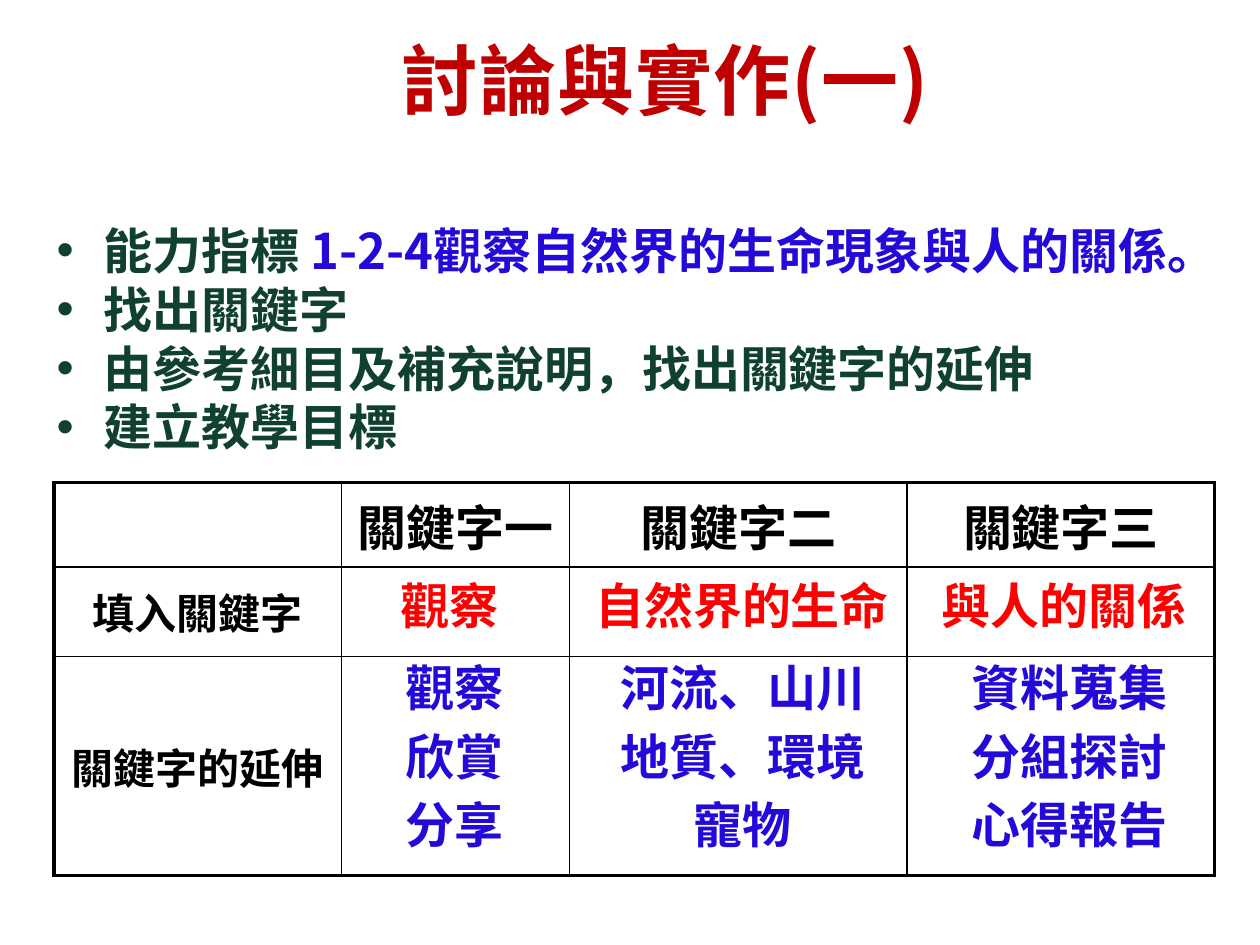
from dataclasses import dataclass

from lxml.etree import SubElement
from pptx import Presentation
from pptx.dml.color import RGBColor
from pptx.enum.text import MSO_ANCHOR, MSO_AUTO_SIZE, PP_ALIGN
from pptx.oxml.ns import qn
from pptx.util import Inches, Pt

COLORS = {
    "title": "C00000",
    "body": "104031",
    "detail": "230AD8",
    "keyword": "FF0000",
    "table": "000000",
}
SANS = "Noto Sans CJK SC"
SERIF = "Times New Roman"
COLUMNS = [2.28, 1.81, 2.68, 2.44]
ROWS = [0.67, 0.71, 1.74]
THIN, THICK = 1, 2.25


@dataclass
class Style:
    color: str
    size: float = 28
    font: str = SANS


@dataclass
class Answer:
    left: float
    top: float
    width: float
    height: float
    lines: list[str]
    color: str


BULLETS = [
    [("能力指標 ", "body"), ("1-2-4觀察自然界的生命現象與人的關係。", "detail")],
    [("找出關鍵字", "body")],
    [("由參考細目及補充說明，找出關鍵字的延伸", "body")],
    [("建立教學目標", "body")],
]
HEADINGS = ["", "關鍵字一", "關鍵字二", "關鍵字三"]
ROW_LABELS = ["填入關鍵字", "關鍵字的延伸"]
ANSWERS = [
    Answer(3.07, 4.52, 0.99, 0.57, ["觀察"], "keyword"),
    Answer(4.61, 4.52, 2.56, 0.57, ["自然界的生命"], "keyword"),
    Answer(7.36, 4.52, 2.17, 0.57, ["與人的關係"], "keyword"),
    Answer(3.11, 5.17, 0.99, 1.7, ["觀察", "欣賞", "分享"], "detail"),
    Answer(4.81, 5.17, 2.17, 1.7, ["河流、山川", "地質、環境", "寵物"], "detail"),
    Answer(7.6, 5.17, 1.77, 1.7, ["資料蒐集", "分組探討", "心得報告"], "detail"),
]


def apply(target, values: dict) -> None:
    for name, value in values.items():
        setattr(target, name, value)


def place(shape, left: float, top: float, width: float, height: float) -> None:
    apply(shape, {
        "left": Inches(left), "top": Inches(top),
        "width": Inches(width), "height": Inches(height),
    })


def add_span(paragraph, text: str, style: Style):
    span = paragraph.add_run()
    span.text = text
    apply(span.font, {"size": Pt(style.size), "bold": True, "name": style.font})
    span.font.color.rgb = RGBColor.from_string(COLORS[style.color])
    properties = span.font._element
    SubElement(properties, qn("a:ea")).set("typeface", SANS)
    return span


def add_lines(frame, lines: list, gap: float, alignment=None) -> None:
    for index, spans in enumerate(lines):
        paragraph = frame.add_paragraph() if index else frame.paragraphs[0]
        apply(paragraph, {
            "alignment": alignment,
            "space_before": Pt(gap if index else 0),
            "line_spacing": Pt(33.6),
        })
        for text, color in spans:
            add_span(paragraph, text, Style(color))


def add_title(page) -> None:
    box = page.shapes.title
    place(box, 0.83, 0, 8.9, 1.25)
    apply(box.text_frame, {
        "vertical_anchor": MSO_ANCHOR.MIDDLE, "auto_size": MSO_AUTO_SIZE.NONE,
    })
    paragraph = box.text_frame.paragraphs[0]
    paragraph.alignment = PP_ALIGN.CENTER
    span = add_span(paragraph, "討論與實作(一)", Style("title", 44))
    span.font._element.set("spc", "50")


def add_body(page) -> None:
    box = page.placeholders[1]
    place(box, 0.35, 1.7, 9.37, 2.13)
    apply(box.text_frame, {
        "vertical_anchor": MSO_ANCHOR.TOP, "auto_size": MSO_AUTO_SIZE.NONE,
        "margin_right": 0,
    })
    add_lines(box.text_frame, BULLETS, 0)


def add_borders(cell, row: int, column: int) -> None:
    outer = {
        "L": column == 0,
        "R": column == len(COLUMNS) - 1,
        "T": row == 0,
        "B": row == len(ROWS) - 1,
    }
    properties = cell._tc.get_or_add_tcPr()
    for side, is_outer in outer.items():
        line = SubElement(properties, qn(f"a:ln{side}"))
        line.set("w", str(Pt(THICK if is_outer else THIN)))
        fill = SubElement(line, qn("a:solidFill"))
        SubElement(fill, qn("a:srgbClr")).set("val", COLORS["table"])


def add_keyword_table(page) -> None:
    frame = page.shapes.add_table(
        len(ROWS), len(COLUMNS), Inches(0.43), Inches(3.83),
        Inches(sum(COLUMNS)), Inches(sum(ROWS)),
    )
    table = frame.table
    apply(table, {"first_row": False, "horz_banding": False})
    for column, width in zip(table.columns, COLUMNS):
        column.width = Inches(width)
    for row, height in zip(table.rows, ROWS):
        row.height = Inches(height)
    labels = [HEADINGS] + [[label, "", "", ""] for label in ROW_LABELS]
    for row, texts in enumerate(labels):
        for column, text in enumerate(texts):
            cell = table.cell(row, column)
            add_borders(cell, row, column)
            cell.fill.background()
            cell.vertical_anchor = MSO_ANCHOR.MIDDLE
            if text:
                paragraph = cell.text_frame.paragraphs[0]
                paragraph.alignment = PP_ALIGN.CENTER
                add_span(paragraph, text, Style("table", 24 if row else 28, SERIF))


def add_answer(page, answer: Answer) -> None:
    box = page.shapes.add_textbox(
        Inches(answer.left), Inches(answer.top),
        Inches(answer.width), Inches(answer.height),
    )
    apply(box.text_frame, {
        "word_wrap": False, "auto_size": MSO_AUTO_SIZE.SHAPE_TO_FIT_TEXT,
    })
    lines = [[(line, answer.color)] for line in answer.lines]
    add_lines(box.text_frame, lines, 5.6, PP_ALIGN.CENTER)


def main() -> None:
    deck = Presentation()
    apply(deck, {"slide_width": Inches(10), "slide_height": Inches(7.5)})
    page = deck.slides.add_slide(deck.slide_layouts[1])
    add_body(page)
    add_keyword_table(page)
    add_title(page)
    for answer in ANSWERS:
        add_answer(page, answer)
    deck.save("out.pptx")


if __name__ == "__main__":
    main()
